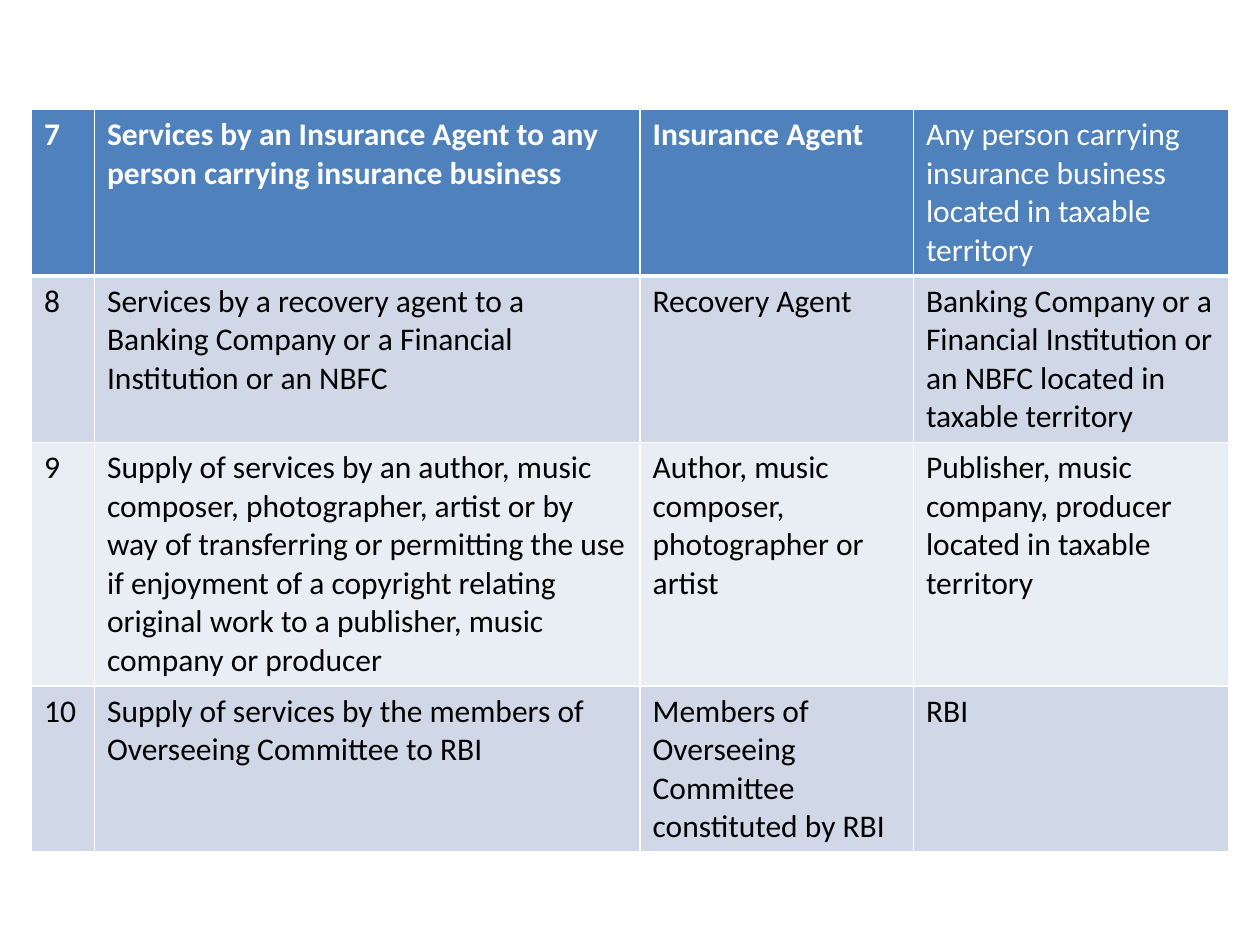
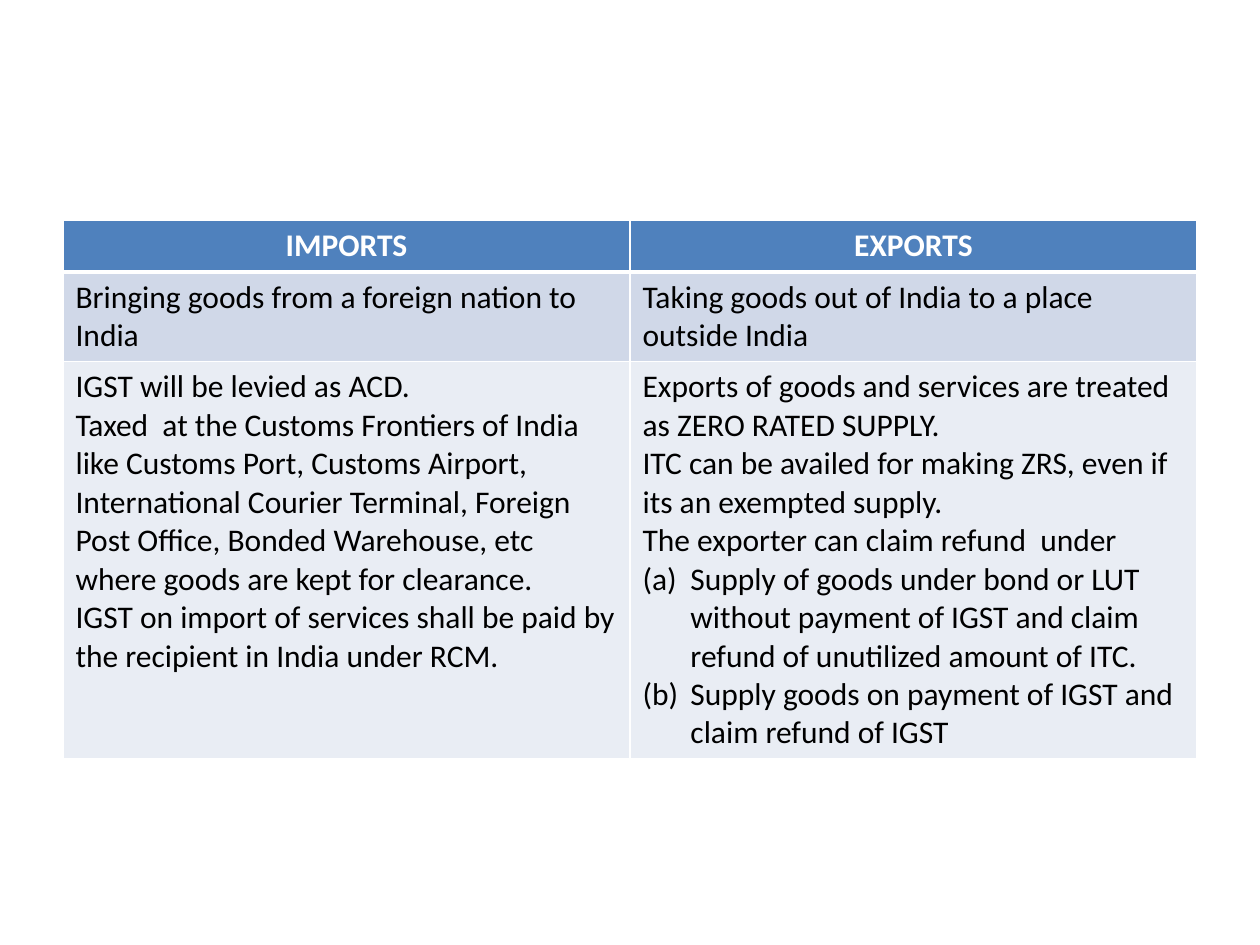
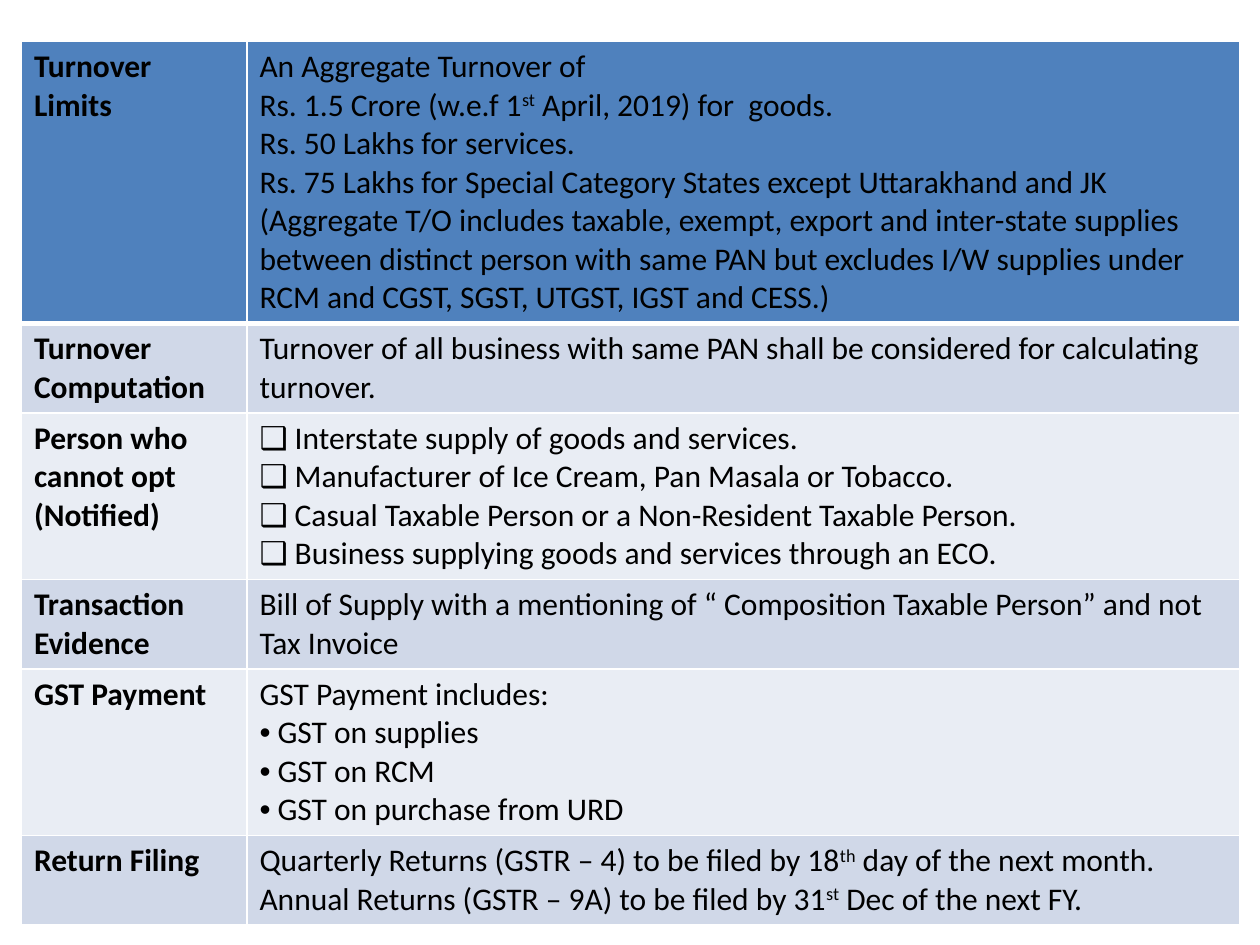
"""Builds three table slides on reverse charge, imports and exports, and the composition scheme."""
from itertools import product

from lxml.etree import SubElement
from pptx import Presentation
from pptx.dml.color import RGBColor
from pptx.enum.text import PP_ALIGN
from pptx.oxml.ns import qn
from pptx.util import Inches, Pt

COLORS = {
    "header": "4F81BD",
    "band_dark": "D0D8E8",
    "band_light": "E9EDF4",
    "white": "FFFFFF",
    "black": "000000",
}
FONT = "Calibri"
FONT_SIZE = Pt(18)
ROW_HEIGHT = Inches(0.41)
NUMBERS = ("(a)", "(b)")
BULLETS = ("❑", "•")

TABLES = [
    {
        "place": (0.25, 0.87, 9.5, 5.8),
        "columns": [0.5, 4.33, 2.17, 2.5],
        "bold": set(product([0], range(3))),
        "header_color": "white",
        "header_align": PP_ALIGN.LEFT,
        "rows": [
            ["7", "Services by an Insurance Agent to any person carrying insurance business",
             "Insurance Agent",
             "Any person carrying insurance business located in taxable territory"],
            ["8", "Services by a recovery agent to a Banking Company or a Financial "
             "Institution or an NBFC",
             "Recovery Agent",
             "Banking Company or a Financial Institution or an NBFC located in taxable territory"],
            ["9", "Supply of services by an author, music composer, photographer, artist or by "
             "way of transferring or permitting the use if enjoyment of a copyright relating "
             "original work to a publisher, music company or producer",
             "Author, music composer, photographer or artist",
             "Publisher, music company, producer located in taxable territory"],
            ["10", "Supply of services by the members of Overseeing Committee to RBI",
             "Members of Overseeing Committee constituted by RBI", "RBI"],
        ],
    },
    {
        "place": (0.5, 1.75, 9, 4.21),
        "columns": [4.5, 4.5],
        "bold": set(product([0], range(2))),
        "header_color": "white",
        "header_align": PP_ALIGN.CENTER,
        "rows": [
            ["IMPORTS", "EXPORTS"],
            ["Bringing goods from a foreign nation to India",
             "Taking goods out of India to a place outside India"],
            ["IGST will be levied as ACD.\n"
             "Taxed  at the Customs Frontiers of India like Customs Port, Customs Airport, "
             "International Courier Terminal, Foreign Post Office, Bonded Warehouse, etc "
             "where goods are kept for clearance.\n"
             "IGST on import of services shall be paid by the recipient in India under RCM.",
             "Exports of goods and services are treated as ZERO RATED SUPPLY.\n"
             "ITC can be availed for making ZRS, even if its an exempted supply.\n"
             "The exporter can claim refund  under\n"
             "(a) Supply of goods under bond or LUT without payment of IGST and claim refund "
             "of unutilized amount of ITC.\n"
             "(b) Supply goods on payment of IGST and claim refund of IGST"],
        ],
    },
    {
        "place": (0.17, 0.33, 9.67, 6.9),
        "columns": [1.79, 7.88],
        "bold": set(product(range(6), [0])),
        "header_color": "black",
        "header_align": PP_ALIGN.LEFT,
        "rows": [
            ["Turnover Limits",
             "An Aggregate Turnover of\n"
             "Rs. 1.5 Crore (w.e.f 1^st^ April, 2019) for  goods.\n"
             "Rs. 50 Lakhs for services.\n"
             "Rs. 75 Lakhs for Special Category States except Uttarakhand and JK\n"
             "(Aggregate T/O includes taxable, exempt, export and inter-state supplies between "
             "distinct person with same PAN but excludes I/W supplies under RCM and CGST, SGST, "
             "UTGST, IGST and CESS.)"],
            ["Turnover Computation",
             "Turnover of all business with same PAN shall be considered for calculating "
             "turnover."],
            ["Person who cannot opt\n(Notified)",
             "❑ Interstate supply of goods and services.\n"
             "❑ Manufacturer of Ice Cream, Pan Masala or Tobacco.\n"
             "❑ Casual Taxable Person or a Non-Resident Taxable Person.\n"
             "❑ Business supplying goods and services through an ECO."],
            ["Transaction Evidence",
             "Bill of Supply with a mentioning of “ Composition Taxable Person” and not "
             "Tax Invoice"],
            ["GST Payment",
             "GST Payment includes:\n• GST on supplies\n• GST on RCM\n"
             "• GST on purchase from URD"],
            ["Return Filing",
             "Quarterly Returns (GSTR – 4) to be filed by 18^th^ day of the next month.\n"
             "Annual Returns (GSTR – 9A) to be filed by 31^st^ Dec of the next FY."],
        ],
    },
]


def style_cell(cell, fill, bottom_width):
    """Give the cell white borders and a solid fill."""
    properties = cell._tc.get_or_add_tcPr()
    for side, width in (("L", 1), ("R", 1), ("T", 1), ("B", bottom_width)):
        line = SubElement(properties, qn(f"a:ln{side}"), w=str(Pt(width)))
        SubElement(SubElement(line, qn("a:solidFill")), qn("a:srgbClr"), val=COLORS["white"])
    cell.fill.solid()
    cell.fill.fore_color.rgb = RGBColor.from_string(COLORS[fill])


def write_paragraph(paragraph, text, bold, color, align):
    """Write text with an optional leading list marker and ^superscripts^."""
    paragraph.alignment = align
    properties = paragraph._p.get_or_add_pPr()
    if text.startswith(NUMBERS):
        text = text[3:].lstrip()
        properties.set("marL", str(Inches(0.38)))
        properties.set("indent", str(Inches(-0.38)))
        SubElement(properties, qn("a:buFont"), typeface="+mj-lt")
        SubElement(properties, qn("a:buAutoNum"), type="alphaLcParenBoth")
    elif text.startswith(BULLETS):
        SubElement(properties, qn("a:buFont"), typeface="Arial")
        SubElement(properties, qn("a:buChar"), char=text[0])
        text = text[1:]
    for position, part in enumerate(text.split("^")):
        run = paragraph.add_run()
        run.text = part
        if position % 2:
            run._r.get_or_add_rPr().set("baseline", "30000")
    for font in [paragraph.font] + [run.font for run in paragraph.runs]:
        font.name = FONT
        font.size = FONT_SIZE
        font.bold = bold
        font.color.rgb = RGBColor.from_string(COLORS[color])


presentation = Presentation()
presentation.slide_width = Inches(10)
presentation.slide_height = Inches(7.5)

for content in TABLES:
    slide = presentation.slides.add_slide(presentation.slide_layouts[6])
    left, top, width, height = map(Inches, content["place"])
    rows, columns = content["rows"], content["columns"]
    frame = slide.shapes.add_table(len(rows), len(columns), left, top, width, height)
    table = frame.table
    for column, column_width in zip(table.columns, columns):
        column.width = Inches(column_width)
    for row in table.rows:
        row.height = ROW_HEIGHT
    frame.width, frame.height = width, height

    for row_index, row in enumerate(rows):
        is_header = row_index == 0
        fill = "header" if is_header else "band_dark" if row_index % 2 else "band_light"
        color = content["header_color"] if is_header else "black"
        align = content["header_align"] if is_header else PP_ALIGN.LEFT
        for column_index, text in enumerate(row):
            cell = table.cell(row_index, column_index)
            style_cell(cell, fill, 3 if is_header else 1)
            bold = (row_index, column_index) in content["bold"]
            for line_index, line in enumerate(text.split("\n")):
                text_frame = cell.text_frame
                paragraph = text_frame.add_paragraph() if line_index else text_frame.paragraphs[0]
                write_paragraph(paragraph, line, bold, color, align)

presentation.save("out.pptx")
